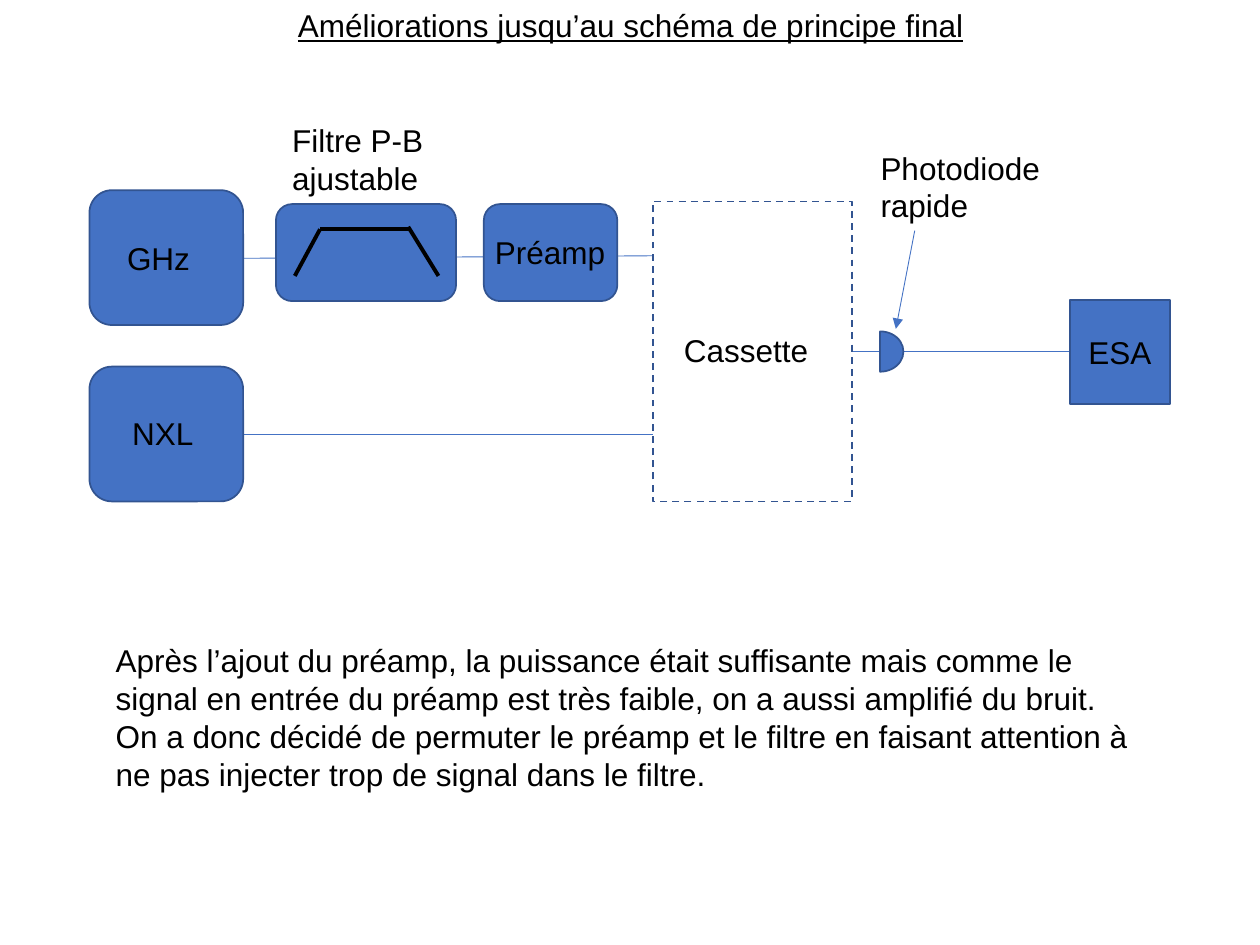
from pptx import Presentation
from pptx.util import Inches, Pt
from pptx.dml.color import RGBColor
from pptx.enum.dml import MSO_LINE
from pptx.enum.shapes import MSO_SHAPE as Shape, MSO_CONNECTOR as Conn
from pptx.enum.text import PP_ALIGN as Align
from pptx.oxml.ns import qn
from lxml.etree import SubElement

# Places are in cells of a grid of 100 columns by 75 rows
COLS, ROWS = 100, 75
WIDTH, HEIGHT = Inches(10), Inches(7.5)

THEME = {
    "font": "Arial", "size": 18, "text": "000000",
    "fill": "4472C4", "edge": "325491", "link": "4472C4", "curve": "000000",
    "edge_w": 1, "link_w": 0.5, "curve_w": 2.25,
}

TITLE = ("Améliorations jusqu’au schéma de principe final", (22.4, 0, 55.3, 4))
COMMENT = ([
    "Après l’ajout du préamp, la puissance était suffisante mais comme le "
    "signal en entrée du préamp est très faible, on a aussi amplifié du bruit.",
    "On a donc décidé de permuter le préamp et le filtre en faisant attention à "
    "ne pas injecter trop de signal dans le filtre.",
], (8.2, 50.4, 83.6, 13.1))

# Blocks: shape, place
ROUND, RECT = Shape.ROUNDED_RECTANGLE, Shape.RECTANGLE
BLOCKS = [
    (ROUND, (7.1, 15.1, 12.2, 10.7)),
    (ROUND, (7.1, 29.1, 12.2, 10.7)),
    (ROUND, (21.9, 16.2, 14.3, 7.7)),
    (ROUND, (38.4, 16.2, 10.6, 7.7)),
    (RECT, (84.95, 23.8, 7.9, 8.3)),
]
CASSETTE = (51.8, 16, 15.8, 23.8)
PHOTODIODE = (68, 26.3, 3.7, 3.2)
HALF_DISC = (54, 162)  # 90° and 270°

# Labels: text, place, wrapped
LABELS = [
    ("GHz", (9.1, 18.5, 8.2, 4), False),
    ("NXL", (9.5, 32.4, 7.5, 4), False),
    ("Cassette", (53.3, 25.8, 12.8, 4), False),
    ("ESA", (85.4, 25.9, 7, 4), False),
    ("Préamp", (38.3, 18, 11, 4), False),
    ("Photodiode rapide", (68.9, 11.3, 15, 7.1), True),
    ("Filtre P-B ajustable", (22.2, 9.1, 13.7, 7.1), True),
]

# Links: start, end
LINKS = [
    ((19.3, 20.5), (51.8, 20.3)),
    ((67.6, 27.9), (85, 27.9)),
    ((19.4, 34.5), (51.8, 34.5)),
]
POINTER = ((72.6, 18.3), (71.1, 26.1))
FILTER_CURVE = [
    ((32.6, 18.2), (25.4, 18.2)),
    ((34.8, 21.9), (32.4, 18)),
    ((25.4, 18.2), (23.4, 21.9)),
]


def color(name):
    return RGBColor.from_string(THEME[name])


def grid(*cells):
    """Turn alternating columns and rows into lengths."""
    return [round(c * (HEIGHT / ROWS if i % 2 else WIDTH / COLS))
            for i, c in enumerate(cells)]


def add_block(s, kind, place, filled=True):
    sp = s.shapes.add_shape(kind, *grid(*place))
    sp.shadow.inherit = False
    if filled:
        sp.fill.solid()
        sp.fill.fore_color.rgb = color("fill")
    else:
        sp.fill.background()
        sp.line.dash_style = MSO_LINE.DASH
    sp.line.color.rgb = color("edge")
    sp.line.width = Pt(THEME["edge_w"])
    return sp


def add_line(s, start, end, style="link", arrow=False):
    cx = s.shapes.add_connector(Conn.STRAIGHT, *grid(*start, *end))
    cx.line.color.rgb = color(style)
    cx.line.width = Pt(THEME[style + "_w"])
    if arrow:
        SubElement(cx.line._get_or_add_ln(), qn("a:tailEnd"), type="triangle")
    SubElement(cx._element.spPr, qn("a:effectLst"))


def add_text(s, lines, place, wrap=True, align=Align.LEFT, underline=None):
    tf = s.shapes.add_textbox(*grid(*place)).text_frame
    tf.word_wrap = wrap
    for i, line in enumerate(lines):
        p = tf.add_paragraph() if i else tf.paragraphs[0]
        p.alignment = align
        r = p.add_run()
        r.text = line
        r.font.name = THEME["font"]
        r.font.size = Pt(THEME["size"])
        r.font.color.rgb = color("text")
        r.font.underline = underline


def main():
    prs = Presentation()
    prs.slide_width, prs.slide_height = WIDTH, HEIGHT
    s = prs.slides.add_slide(prs.slide_layouts[6])

    # Links lie behind the blocks
    for start, end in LINKS:
        add_line(s, start, end)
    for kind, place in BLOCKS:
        add_block(s, kind, place)
    add_block(s, RECT, CASSETTE, filled=False)

    # Photodiode: a half disc facing right
    sp = add_block(s, Shape.PIE, PHOTODIODE)
    sp.rotation = 180
    sp.adjustments[0], sp.adjustments[1] = HALF_DISC
    add_line(s, *POINTER, arrow=True)

    # Band-pass curve on the filter
    for start, end in FILTER_CURVE:
        add_line(s, start, end, "curve")

    # Text
    title, place = TITLE
    add_text(s, [title], place, align=Align.CENTER, underline=True)
    for label, place, wrap in LABELS:
        add_text(s, [label], place, wrap)
    add_text(s, *COMMENT)

    prs.save("out.pptx")


if __name__ == "__main__":
    main()
